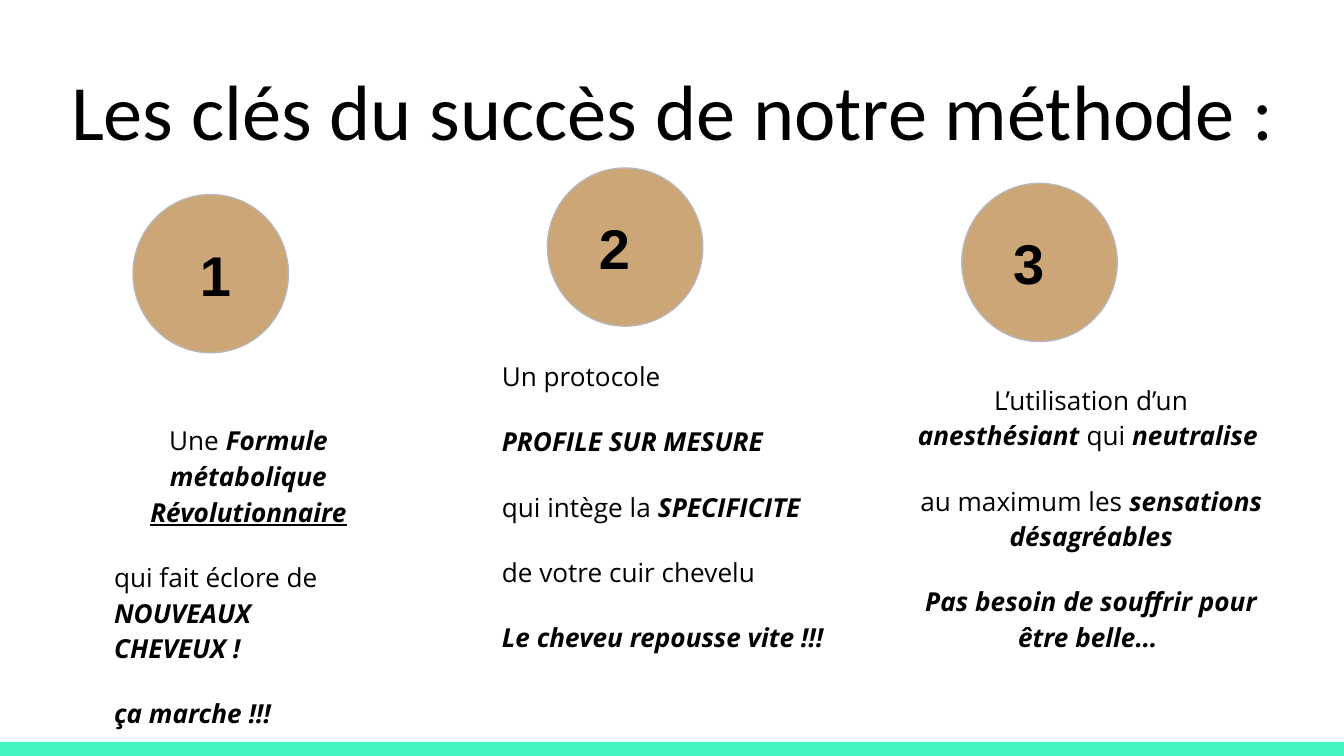
from dataclasses import dataclass
from typing import Any

from pptx import Presentation
from pptx.dml.color import RGBColor
from pptx.enum.shapes import MSO_SHAPE
from pptx.enum.text import MSO_ANCHOR, PP_ALIGN
from pptx.util import Pt

SCALE = 9525
BLACK = RGBColor(0x00, 0x00, 0x00)
WHITE = RGBColor(0xFF, 0xFF, 0xFF)
MINT = RGBColor(0x43, 0xF5, 0xC1)
TAN = RGBColor(0xCC, 0xA6, 0x77)
GREY = RGBColor(0xB7, 0xB7, 0xB7)

PLAIN = {"bold": False, "italic": False}
STRONG = {"bold": True, "italic": True}
UNDERLINED = {**STRONG, "underline": True}
LEFT = {"alignment": PP_ALIGN.LEFT, "line_spacing": 1.13}
CENTER = {"alignment": PP_ALIGN.CENTER, "line_spacing": 1.13}
LOOSE = {"alignment": PP_ALIGN.CENTER, "line_spacing": 1.15}

COLUMNS = [
    ((24, 290, 259, 224), [
        (LOOSE, [("Une ", PLAIN), ("Formule métabolique ", STRONG),
                 ("Révolutionnaire", UNDERLINED)]),
        (LEFT, [("qui fait éclore de ", PLAIN), ("NOUVEAUX CHEVEUX !", STRONG)]),
        (LEFT, [("ça marche !!!", STRONG)]),
    ]),
    ((598, 262, 315, 189), [
        (CENTER, [("L’utilisation d’un ", PLAIN), ("anesthésiant", STRONG),
                  (" qui ", PLAIN), ("neutralise ", STRONG)]),
        (CENTER, [("au maximum les ", PLAIN), ("sensations désagréables", STRONG)]),
        (CENTER, [("Pas besoin de souffrir pour être belle… ", STRONG)]),
    ]),
    ((301, 245, 307, 235), [
        (LEFT, [("Un protocole", PLAIN)]),
        (LEFT, [("PROFILE SUR MESURE", STRONG)]),
        (LEFT, [("qui intège la ", PLAIN), ("SPECIFICITE", STRONG)]),
        (LEFT, [("de votre cuir chevelu", PLAIN)]),
        (LEFT, [("Le cheveu repousse vite !!!", STRONG)]),
    ]),
]
BADGES = [("1", 95, 139, 22), ("2", 391, 120, 11), ("3", 687, 131, 11)]


def px(length):
    return length * SCALE


@dataclass
class Painter:
    """Holds the text style and the page being filled."""

    page: Any
    body_font: str = "Open Sans"
    body_size: int = 14
    gap: int = 16
    inset: float = 7.2

    def apply(self, target, values):
        for name, value in values.items():
            setattr(target, name, value)

    def frame(self, box, anchor):
        sides = ("margin_left", "margin_top", "margin_right", "margin_bottom")
        self.apply(box.text_frame, {
            "word_wrap": True, "vertical_anchor": anchor,
            **dict.fromkeys(sides, Pt(self.inset))})
        return box.text_frame

    def span(self, para, text, font, size, style):
        span = para.add_run()
        span.text = text
        self.apply(span.font, {"name": font, "size": Pt(size), **style})
        span.font.color.rgb = BLACK

    def indent(self, para, length):
        properties = para._p.get_or_add_pPr()
        properties.set("marL", str(px(length)))
        properties.set("indent", "0")

    def shape(self, kind, bounds, fill, line=None):
        shape = self.page.shapes.add_shape(kind, *map(px, bounds))
        shape.shadow.inherit = False
        shape.fill.solid()
        shape.fill.fore_color.rgb = fill
        if line is None:
            shape.line.fill.background()
        else:
            shape.line.color.rgb = line
            shape.line.width = Pt(0.75)
        return shape

    def title(self, text, bounds):
        box = self.page.shapes.add_textbox(*map(px, bounds))
        para = self.frame(box, MSO_ANCHOR.BOTTOM).paragraphs[0]
        para.alignment = PP_ALIGN.CENTER
        self.span(para, text, "Calibri", 42, {})

    def column(self, bounds, paragraphs):
        box = self.page.shapes.add_textbox(*map(px, bounds))
        frame = self.frame(box, MSO_ANCHOR.TOP)
        for index, (layout, spans) in enumerate(paragraphs):
            para = frame.add_paragraph() if index else frame.paragraphs[0]
            self.apply(para, {**layout, "space_before": Pt(self.gap if index else 0)})
            self.indent(para, 48)
            for text, style in spans:
                self.span(para, text, self.body_font, self.body_size, style)
        para.space_after = Pt(self.gap)

    def badge(self, number, left, top, indent):
        circle = self.shape(MSO_SHAPE.OVAL, (left, top, 111, 113), TAN, GREY)
        para = self.frame(circle, MSO_ANCHOR.MIDDLE).paragraphs[0]
        para.alignment = PP_ALIGN.LEFT
        self.indent(para, indent)
        self.span(para, number, "Arial", 30, {"bold": True})


def main():
    deck = Presentation()
    deck.slide_width, deck.slide_height = px(960), px(540)
    page = deck.slides.add_slide(deck.slide_layouts[6])
    page.background.fill.solid()
    page.background.fill.fore_color.rgb = WHITE
    painter = Painter(page)
    painter.shape(MSO_SHAPE.RECTANGLE, (0, 530, 960, 10), MINT)
    painter.title("Les clés du succès de notre méthode :", (33, 34, 895, 87))
    for bounds, paragraphs in COLUMNS:
        painter.column(bounds, paragraphs)
    for badge in BADGES:
        painter.badge(*badge)
    deck.save("out.pptx")


if __name__ == "__main__":
    main()
